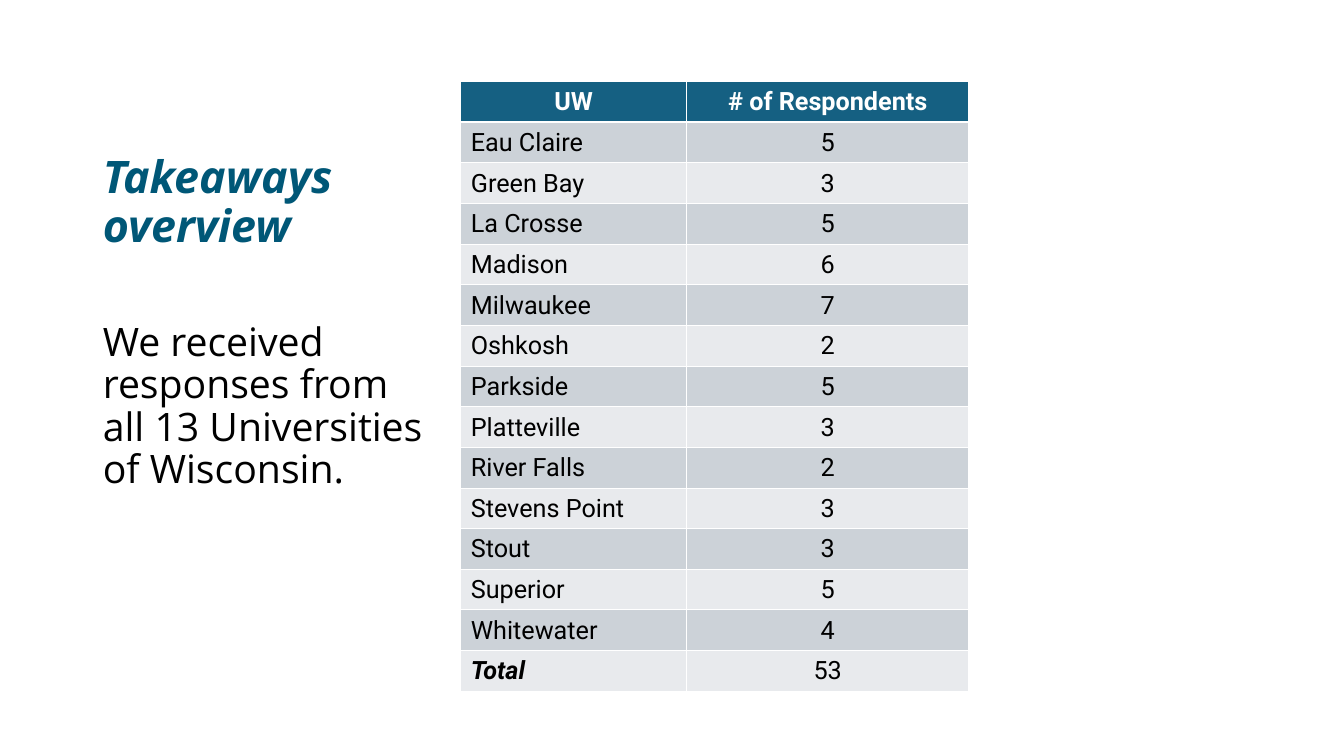
"""Build the takeaways slide with the table of respondents per university."""
import pptx
import pptx.dml.color
import pptx.enum.text
import pptx.oxml
import pptx.oxml.ns
import pptx.util

Inches = pptx.util.Inches
Pt = pptx.util.Pt
ALIGN = pptx.enum.text.PP_ALIGN
ANCHOR = pptx.enum.text.MSO_ANCHOR

RESPONDENTS = [
    ("Eau Claire", 5), ("Green Bay", 3), ("La Crosse", 5), ("Madison", 6),
    ("Milwaukee", 7), ("Oshkosh", 2), ("Parkside", 5), ("Platteville", 3),
    ("River Falls", 2), ("Stevens Point", 3), ("Stout", 3), ("Superior", 5),
    ("Whitewater", 4),
]


def rgb(color):
    return pptx.dml.color.RGBColor.from_string(color)


def write(tf, text, font, size, color="000000", bold=False, italic=False,
          align=ALIGN.LEFT, spacing=0.9, bullet=True):
    p = tf.paragraphs[0]
    p.alignment, p.line_spacing = align, spacing
    p.space_before = Pt(0)
    if not bullet:
        pPr = p._p.get_or_add_pPr()
        pPr.set("marL", "0")
        pPr.set("indent", "0")
        pPr.append(pptx.oxml.parse_xml(f"<a:buNone {pptx.oxml.ns.nsdecls('a')}/>"))
    r = p.add_run()
    r.text = text
    r.font.name, r.font.size = font, Pt(size)
    r.font.bold, r.font.italic = bold, italic
    r.font.color.rgb = rgb(color)


class SlideBuilder:
    heading_font = "Open Sans"
    table_font = "Roboto"
    title_color = "005777"
    header_fill = "156082"
    band_fills = ("E8EAED", "CCD2D8")
    border = "FFFFFF"

    def __init__(self, prs):
        self.slide = prs.slides.add_slide(prs.slide_layouts[1])

    def placeholder(self, idx, text, box, anchor, **fmt):
        sp = self.slide.placeholders[idx]
        sp.left, sp.top, sp.width, sp.height = map(Inches, box)
        tf = sp.text_frame
        tf.word_wrap = True
        tf.auto_size = pptx.enum.text.MSO_AUTO_SIZE.NONE
        tf.vertical_anchor = anchor
        write(tf, text, self.heading_font, **fmt)

    def cell(self, cell, text, fill, borders, **fmt):
        tcPr = cell._tc.get_or_add_tcPr()
        for side, width in zip("LRTB", borders):
            tcPr.append(pptx.oxml.parse_xml(
                f"<a:ln{side} {pptx.oxml.ns.nsdecls('a')} w='{Pt(width)}'>"
                f"<a:solidFill><a:srgbClr val='{self.border}'/></a:solidFill>"
                f"</a:ln{side}>"))
        cell.fill.solid()
        cell.fill.fore_color.rgb = rgb(fill)
        write(cell.text_frame, text, self.table_font, 18,
              spacing=Pt(21.8), **fmt)

    def table(self, rows, left, top, widths, row_height):
        table = self.slide.shapes.add_table(
            len(rows), len(widths), Inches(left), Inches(top),
            Inches(sum(widths)), Inches(row_height * len(rows))).table
        for column, width in zip(table.columns, widths):
            column.width = Inches(width)
        for i, row in enumerate(rows):
            header, total = i == 0, i == len(rows) - 1
            fill = self.header_fill if header else self.band_fills[i % 2]
            borders = (0.75, 0.75, 1.32 if i == 1 else 0.75, 1.32 if header else 0.75)
            for j, value in enumerate(row):
                label = j == 0
                self.cell(table.cell(i, j), str(value), fill, borders,
                          color="FFFFFF" if header else "000000",
                          bold=header or (total and label),
                          italic=total and label,
                          align=ALIGN.LEFT if label and not header else ALIGN.CENTER)


def main():
    prs = pptx.Presentation()
    prs.slide_width, prs.slide_height = Inches(13.33), Inches(7.5)
    s = SlideBuilder(prs)
    s.placeholder(0, "Takeaways overview", (0.92, 1.08, 4.3, 1.47), ANCHOR.BOTTOM,
                  size=32, color=s.title_color, bold=True, italic=True)
    s.placeholder(1, "We received responses from\u00a0all 13 Universities of Wisconsin.".replace("\u00a0", " "),
                  (0.92, 3.15, 3.4, 2.45), ANCHOR.TOP, size=28, bullet=False)
    total = sum(count for _, count in RESPONDENTS)
    rows = [("UW", "# of Respondents"), *RESPONDENTS, ("Total", total)]
    s.table(rows, left=4.57, top=0.81, widths=(2.24, 2.8), row_height=0.4)
    prs.save("out.pptx")


if __name__ == "__main__":
    main()
